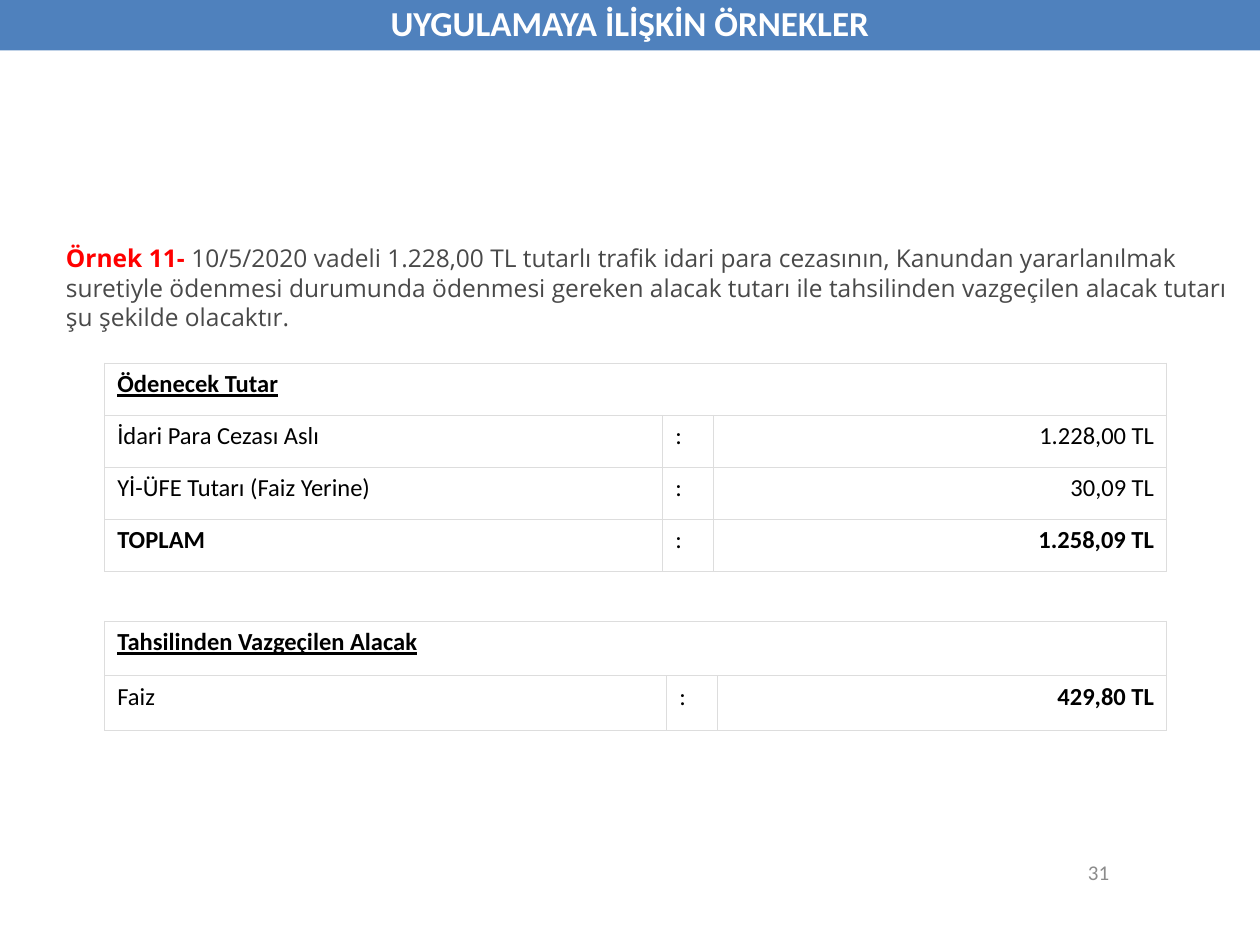
from lxml import etree
from pptx import Presentation
from pptx.dml.color import RGBColor
from pptx.enum.shapes import MSO_SHAPE
from pptx.enum.text import MSO_ANCHOR, PP_ALIGN
from pptx.oxml.ns import qn
from pptx.util import Cm, Pt

BLUE = RGBColor(0x4F, 0x81, 0xBD)
WHITE = RGBColor(0xFF, 0xFF, 0xFF)
BLACK = RGBColor(0, 0, 0)
RED = RGBColor(0xFF, 0, 0)
DARK_GRAY = RGBColor(0x49, 0x49, 0x49)
NUMBER_GRAY = RGBColor(0x8C, 0x8C, 0x8C)
BORDER_GRAY = RGBColor(0xDD, 0xDD, 0xDD)
LEFT, CENTER, RIGHT = PP_ALIGN.LEFT, PP_ALIGN.CENTER, PP_ALIGN.RIGHT
MIDDLE = MSO_ANCHOR.MIDDLE
RECTANGLE = MSO_SHAPE.RECTANGLE


def add_run(paragraph, text, color, **formats):
    run = paragraph.add_run()
    run.text = text
    run.font.color.rgb = color
    for name, value in ({"name": "Calibri", "size": Pt(14)} | formats).items():
        setattr(run.font, name, value)


def add_borders(cell):
    properties = cell._tc.get_or_add_tcPr()
    for side in ("lnL", "lnR", "lnT", "lnB"):
        line = etree.SubElement(properties, qn(f"a:{side}"), w=str(Pt(0.6)))
        fill = etree.SubElement(line, qn("a:solidFill"))
        etree.SubElement(fill, qn("a:srgbClr"), val=str(BORDER_GRAY))


prs = Presentation()
prs.slide_width, prs.slide_height = Cm(25.4), Cm(19.05)
slide = prs.slides.add_slide(prs.slide_layouts[6])

page_number = slide.shapes.add_textbox(Cm(16.69), Cm(17.07), Cm(5.92), Cm(1.02)).text_frame
page_number.word_wrap = True
page_number.vertical_anchor = MIDDLE
page_number.paragraphs[0].alignment = RIGHT
add_run(page_number.paragraphs[0], "31", NUMBER_GRAY, size=Pt(12))

example = slide.shapes.add_textbox(Cm(1.08), Cm(4.78), Cm(24.4), Cm(2.06)).text_frame
example.word_wrap = True
add_run(example.paragraphs[0], "Örnek 11- ", RED, name="Open Sans", bold=True)
add_run(
    example.paragraphs[0],
    "10/5/2020 vadeli 1.228,00 TL tutarlı trafik idari para cezasının, Kanundan "
    "yararlanılmak suretiyle ödenmesi durumunda ödenmesi gereken alacak tutarı ile "
    "tahsilinden vazgeçilen alacak tutarı şu şekilde olacaktır.",
    DARK_GRAY, name="Open Sans",
)

amount_tables = [
    (7.32, 1.05, (11.25, 1.02, 9.14), "Ödenecek Tutar", [
        ("İdari Para Cezası Aslı", "1.228,00 TL", False, False),
        ("Yİ-ÜFE Tutarı (Faiz Yerine)", "30,09 TL", False, False),
        ("TOPLAM", "1.258,09 TL", True, True),
    ]),
    (12.52, 1.1, (11.33, 1.02, 9.06), "Tahsilinden Vazgeçilen Alacak", [
        ("Faiz", "429,80 TL", False, True),
    ]),
]
for top, row_height, widths, heading, items in amount_tables:
    row_count = len(items) + 1
    amounts = slide.shapes.add_table(
        row_count, 3, Cm(2.11), Cm(top), Cm(sum(widths)), Cm(row_height * row_count)
    ).table
    for column, width in zip(amounts.columns, widths):
        column.width = Cm(width)
    for cell in amounts.iter_cells():
        add_borders(cell)
        cell.fill.solid()
        cell.fill.fore_color.rgb = WHITE
    amounts.cell(0, 0).merge(amounts.cell(0, 2))
    add_run(amounts.cell(0, 0).text_frame.paragraphs[0], heading, BLACK,
            bold=True, underline=True)
    for row, (label, amount, label_bold, amount_bold) in enumerate(items, 1):
        entries = [(label, LEFT, label_bold), (":", LEFT, False), (amount, RIGHT, amount_bold)]
        for col, (text, alignment, bold) in enumerate(entries):
            paragraph = amounts.cell(row, col).text_frame.paragraphs[0]
            paragraph.alignment = alignment
            add_run(paragraph, text, BLACK, bold=bold)

title_bar = slide.shapes.add_shape(RECTANGLE, 0, 0, prs.slide_width, Cm(1.02))
title_bar.shadow.inherit = False
title_bar.fill.solid()
title_bar.fill.fore_color.rgb = BLUE
title_bar.line.fill.background()
title_bar.text_frame.vertical_anchor = MIDDLE
title = title_bar.text_frame.paragraphs[0]
title.alignment = CENTER
title.line_spacing = 0.9
add_run(title, "UYGULAMAYA İLİŞKİN ÖRNEKLER", WHITE, size=Pt(20), bold=True)

prs.save("out.pptx")
